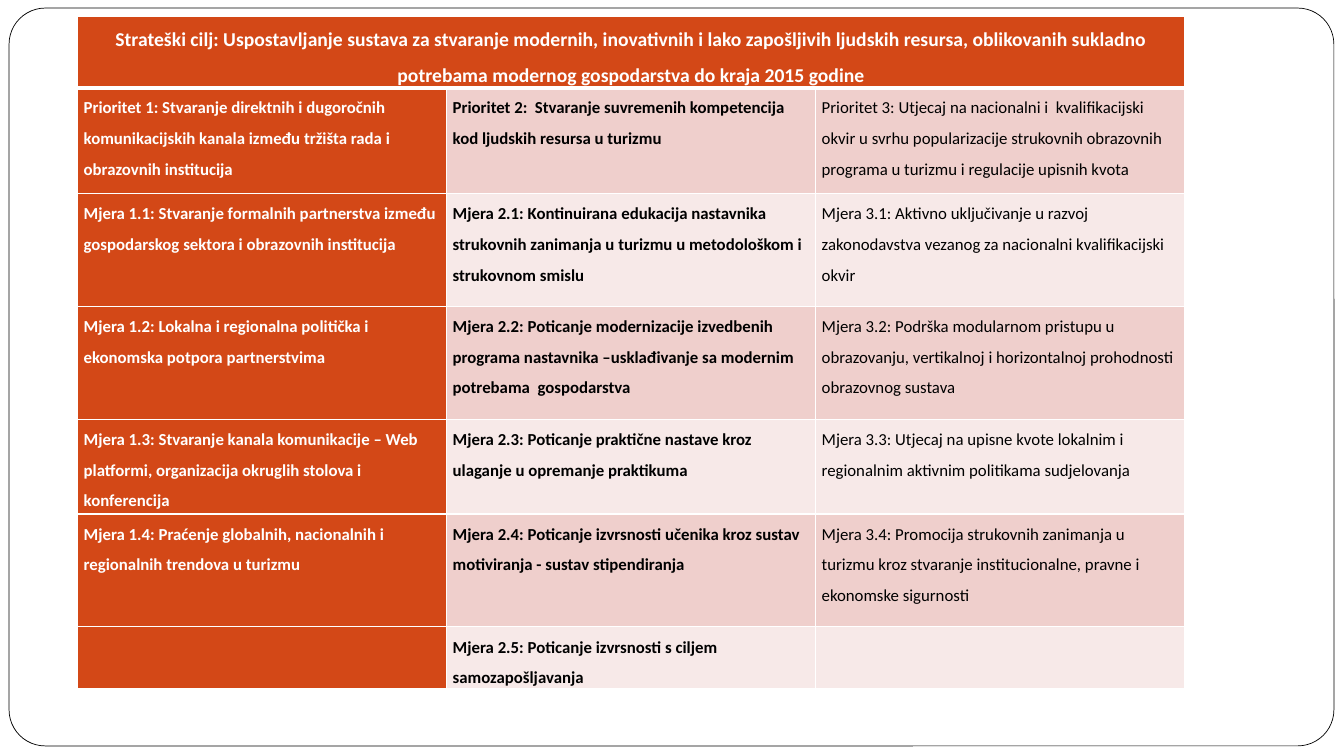
from lxml import etree
from pptx import Presentation
from pptx.dml.color import RGBColor
from pptx.enum.shapes import MSO_SHAPE
from pptx.enum.text import PP_ALIGN
from pptx.oxml.ns import qn
from pptx.util import Inches, Pt

ROUNDED = MSO_SHAPE.ROUNDED_RECTANGLE
LEFT, CENTER = PP_ALIGN.LEFT, PP_ALIGN.CENTER

FONT = "Calibri"
WHITE, BLACK, ORANGE = "FFFFFF", "000000", "D34817"
BANDS = ("EFCFCC", "F7E9E8")

GOAL = (
    "Strateški cilj: Uspostavljanje sustava za stvaranje modernih, inovativnih i lako "
    "zapošljivih ljudskih resursa, oblikovanih sukladno potrebama modernog gospodarstva "
    "do kraja 2015 godine"
)
# One row per level: the priorities, then their measures
PLAN = [
    ("Prioritet 1: Stvaranje direktnih i dugoročnih komunikacijskih kanala između tržišta rada i obrazovnih institucija",
     "Prioritet 2:  Stvaranje suvremenih kompetencija kod ljudskih resursa u turizmu",
     "Prioritet 3: Utjecaj na nacionalni i  kvalifikacijski okvir u svrhu popularizacije strukovnih obrazovnih programa u turizmu i regulacije upisnih kvota"),
    ("Mjera 1.1: Stvaranje formalnih partnerstva između gospodarskog sektora i obrazovnih institucija",
     "Mjera 2.1: Kontinuirana edukacija nastavnika strukovnih zanimanja u turizmu u metodološkom i strukovnom smislu",
     "Mjera 3.1: Aktivno uključivanje u razvoj zakonodavstva vezanog za nacionalni kvalifikacijski okvir"),
    ("Mjera 1.2: Lokalna i regionalna politička i ekonomska potpora partnerstvima",
     "Mjera 2.2: Poticanje modernizacije izvedbenih programa nastavnika –usklađivanje sa modernim potrebama  gospodarstva",
     "Mjera 3.2: Podrška modularnom pristupu u obrazovanju, vertikalnoj i horizontalnoj prohodnosti obrazovnog sustava"),
    ("Mjera 1.3: Stvaranje kanala komunikacije – Web platformi, organizacija okruglih stolova i konferencija",
     "Mjera 2.3: Poticanje praktične nastave kroz ulaganje u opremanje praktikuma",
     "Mjera 3.3: Utjecaj na upisne kvote lokalnim i regionalnim aktivnim politikama sudjelovanja"),
    ("Mjera 1.4: Praćenje globalnih, nacionalnih i regionalnih trendova u turizmu",
     "Mjera 2.4: Poticanje izvrsnosti učenika kroz sustav motiviranja - sustav stipendiranja",
     "Mjera 3.4: Promocija strukovnih zanimanja u turizmu kroz stvaranje institucionalne, pravne i ekonomske sigurnosti"),
    ("", "Mjera 2.5: Poticanje izvrsnosti s ciljem samozapošljavanja", ""),
]
ROW_HEIGHTS = (0.62, 1.05, 1.12, 1.12, 0.94, 1.12, 0.56)
COLUMN_WIDTH = 3.66
# Fixed format of each column: text colour and weight
COLUMN_FORMATS = (
    {"color": WHITE, "bold": True},
    {"color": BLACK, "bold": True},
    {"color": BLACK, "bold": False},
)


def rgb(value):
    return RGBColor.from_string(value)


def write_text(frame, text, size=12, color=BLACK, bold=False, align=LEFT):
    paragraph = frame.paragraphs[0]
    paragraph.alignment = align
    paragraph.line_spacing = 1.5
    run = paragraph.add_run()
    run.text = text
    run.font.name = FONT
    run.font.size = Pt(size)
    run.font.bold = bold
    run.font.color.rgb = rgb(color)


def set_borders(cell, bottom=1):
    """Draw white borders; they must stand before the fill in the cell."""
    properties = cell._tc.get_or_add_tcPr()
    widths = {"a:lnL": 1, "a:lnR": 1, "a:lnT": 1, "a:lnB": bottom}
    for position, (tag, width) in enumerate(widths.items()):
        line = etree.Element(qn(tag), w=str(Pt(width)))
        fill = etree.SubElement(line, qn("a:solidFill"))
        etree.SubElement(fill, qn("a:srgbClr"), val=WHITE)
        properties.insert(position, line)


def fill_cell(cell, text, fill, bottom=1, **text_format):
    cell.fill.solid()
    cell.fill.fore_color.rgb = rgb(fill)
    cell.margin_left = cell.margin_right = Inches(0.06)
    cell.margin_top = cell.margin_bottom = 0
    set_borders(cell, bottom)
    if text:
        write_text(cell.text_frame, text, **text_format)


def add_frame(slide):
    frame = slide.shapes.add_shape(
        ROUNDED, Inches(0.09), Inches(0.08), Inches(13.14), Inches(7.32))
    frame.adjustments[0] = 0.049
    frame.shadow.inherit = False
    frame.fill.solid()
    frame.fill.fore_color.rgb = rgb(WHITE)
    frame.line.color.rgb = rgb(BLACK)
    frame.line.width = Pt(0.5)


def add_plan(slide):
    columns = len(COLUMN_FORMATS)
    plan = slide.shapes.add_table(
        len(ROW_HEIGHTS), columns, Inches(0.77), Inches(0.16),
        Inches(columns * COLUMN_WIDTH), Inches(sum(ROW_HEIGHTS))).table
    for column in plan.columns:
        column.width = Inches(COLUMN_WIDTH)
    for row, height in zip(plan.rows, ROW_HEIGHTS):
        row.height = Inches(height)

    # Strategic goal across the whole width
    goal = plan.cell(0, 0)
    goal.merge(plan.cell(0, columns - 1))
    fill_cell(goal, GOAL, ORANGE, bottom=3, size=14, color=WHITE, bold=True, align=CENTER)

    # Priorities and measures: orange first column, banded others
    for row, texts in enumerate(PLAN):
        for column, text in enumerate(texts):
            fill = BANDS[row % 2] if column else ORANGE
            fill_cell(plan.cell(row + 1, column), text, fill, **COLUMN_FORMATS[column])


def main():
    presentation = Presentation()
    presentation.slide_width = Inches(13.33)
    presentation.slide_height = Inches(7.5)
    slide = presentation.slides.add_slide(presentation.slide_layouts[6])
    add_frame(slide)
    add_plan(slide)
    presentation.save("out.pptx")


if __name__ == "__main__":
    main()
